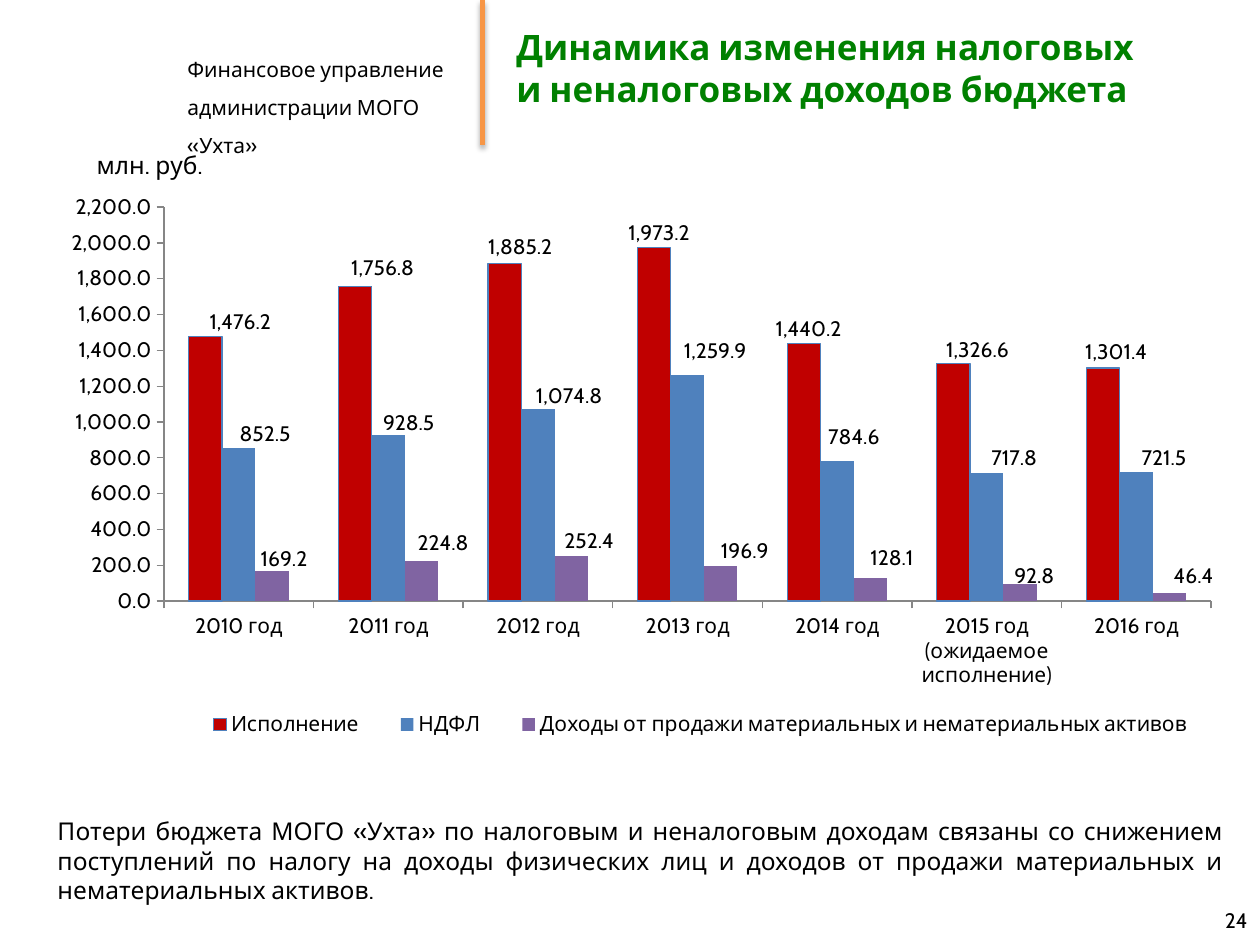
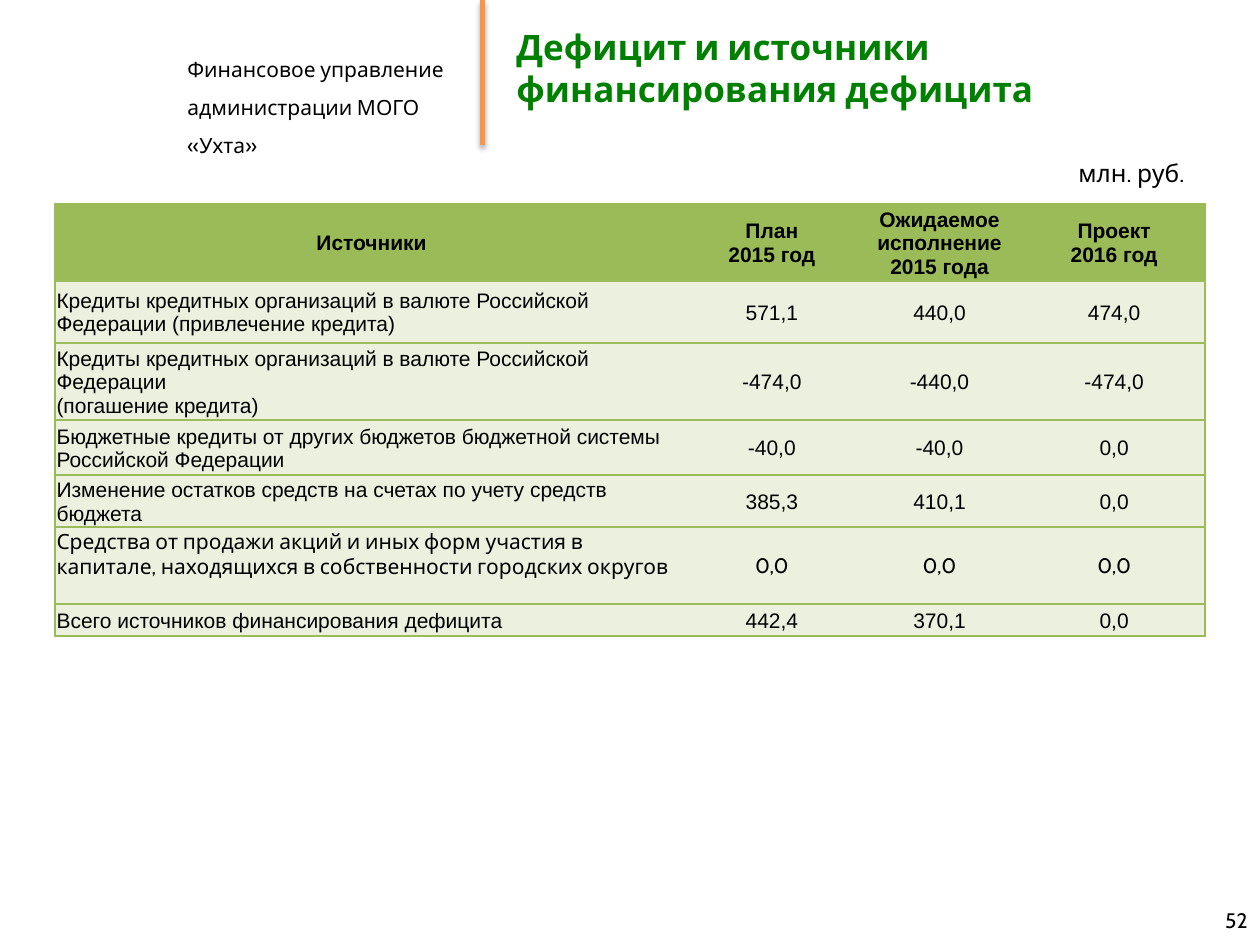
from dataclasses import dataclass

from lxml import etree
from pptx import Presentation
from pptx.chart.data import CategoryChartData
from pptx.dml.color import RGBColor
from pptx.enum.chart import XL_CHART_TYPE, XL_LABEL_POSITION, XL_LEGEND_POSITION, XL_TICK_MARK
from pptx.enum.shapes import MSO_CONNECTOR
from pptx.enum.text import MSO_ANCHOR, PP_ALIGN
from pptx.oxml import parse_xml
from pptx.oxml.ns import nsdecls, qn
from pptx.util import Cm, Pt

LEFT, CENTER, RIGHT, JUSTIFY = PP_ALIGN.LEFT, PP_ALIGN.CENTER, PP_ALIGN.RIGHT, PP_ALIGN.JUSTIFY
TOP, MIDDLE = MSO_ANCHOR.TOP, MSO_ANCHOR.MIDDLE
COLUMNS = XL_CHART_TYPE.COLUMN_CLUSTERED
ABOVE_BAR = XL_LABEL_POSITION.OUTSIDE_END
LEGEND_BOTTOM = XL_LEGEND_POSITION.BOTTOM
TICK_OUT = XL_TICK_MARK.OUTSIDE
STRAIGHT = MSO_CONNECTOR.STRAIGHT


@dataclass(frozen=True)
class Theme:
    font: str = "Cabin"
    table_font: str = "Arial"
    text: str = "000000"
    title: str = "008000"
    divider: str = "F79646"
    axis: str = "868686"
    bar_outline: str = "4F81BD"
    table_green: str = "9BBB59"
    table_pale: str = "EBF1DE"
    paper: str = "FFFFFF"
    title_size: int = 20
    body_size: int = 14
    small_size: int = 12


THEME = Theme()

DEPARTMENT = "Финансовое управление\nадминистрации МОГО «Ухта»"
UNIT = "млн. руб."
NUMBER_FORMAT = "#,##0.0"

INCOME_TITLE = "Динамика изменения налоговых и неналоговых доходов бюджета"
INCOME_NOTE = (
    "Потери бюджета МОГО «Ухта» по налоговым и неналоговым доходам связаны со снижением "
    "поступлений по налогу на доходы физических лиц и доходов от продажи материальных и "
    "нематериальных активов."
)
YEARS = ["2010 год", "2011 год", "2012 год", "2013 год", "2014 год",
         "2015 год (ожидаемое исполнение)", "2016 год"]
# Label shifts are percentages of the chart width and height.
INCOME_SERIES = [
    {"name": "Исполнение", "color": "C00000",
     "values": [1476.2, 1756.8, 1885.2, 1973.2, 1440.2, 1326.6, 1301.4],
     "shifts": [(2.9, .5), (2.3, -.2), (1.3, .2), (.4, .4), (.4, .6), (2, .6), (1.1, .2)]},
    {"name": "НДФЛ", "color": "4F81BD",
     "values": [852.5, 928.5, 1074.8, 1259.9, 784.6, 717.8, 721.5],
     "shifts": [(2.2, .5), (1.7, .9), (2.6, .8), (2.3, -1.1), (1.4, -.9), (2.3, .5), (2.3, .6)]},
    {"name": "Доходы от продажи материальных и нематериальных активов", "color": "8064A2",
     "values": [169.2, 224.8, 252.4, 196.9, 128.1, 92.8, 46.4],
     "shifts": [(1, .9), (1.8, 0), (1.5, .5), (2, .5), (1.8, -.3), (1.2, 1.4), (2, .2)]},
]

DEFICIT_TITLE = "Дефицит и источники финансирования дефицита"
DEFICIT_ROWS = [
    ("Источники", "План\n2015 год", "Ожидаемое исполнение 2015 года", "Проект\n2016 год"),
    ("Кредиты кредитных организаций в валюте Российской Федерации (привлечение кредита)",
     "571,1", "440,0", "474,0"),
    ("Кредиты кредитных организаций в валюте Российской Федерации\n(погашение кредита)",
     "-474,0", "-440,0", "-474,0"),
    ("Бюджетные кредиты от других бюджетов бюджетной системы Российской Федерации",
     "-40,0", "-40,0", "0,0"),
    ("Изменение остатков средств на счетах по учету средств бюджета",
     "385,3", "410,1", "0,0"),
    ("Средства от продажи акций и иных форм участия в капитале, находящихся в собственности "
     "городских округов", "0,0", "0,0", "0,0"),
    ("Всего источников финансирования дефицита", "442,4", "370,1", "0,0"),
]
SHARES_ROW = 5
COLUMN_WIDTHS = [12.76, 3.38, 3.38, 3.66]
ROW_HEIGHTS = [1.55, 1.25, 1.55, 1.11, 1.04, 1.55, 0.64]


def rgb(color):
    return RGBColor.from_string(color)


def style_font(font, size, color=THEME.text, bold=False, name=THEME.font):
    font.name, font.size, font.bold = name, Pt(size), bold
    font.color.rgb = rgb(color)


def style_frame(frame, text, size, align=LEFT, spacing=None, **look):
    frame.text = text
    for para in frame.paragraphs:
        para.alignment = align
        para.line_spacing = spacing
        for span in para.runs:
            style_font(span.font, size, **look)


def add_text(page, text, place, size, anchor=TOP, **look):
    box = page.shapes.add_textbox(*map(Cm, place))
    box.text_frame.word_wrap = True
    box.text_frame.vertical_anchor = anchor
    style_frame(box.text_frame, text, size, **look)
    return box


def add_divider(page):
    divider = page.shapes.add_connector(STRAIGHT, Cm(9.73), 0, Cm(9.73), Cm(2.92))
    divider.line.color.rgb = rgb(THEME.divider)
    divider.line.width = Pt(3)
    divider._element.spPr.append(parse_xml(
        f'<a:effectLst {nsdecls("a")}><a:outerShdw blurRad="{Pt(3.1)}" dist="{Pt(1.8)}" '
        'dir="5400000" rotWithShape="0"><a:srgbClr val="000000"><a:alpha val="35000"/>'
        '</a:srgbClr></a:outerShdw></a:effectLst>'))


def add_page(deck, title, title_width, number):
    page = deck.slides.add_slide(deck.slide_layouts[6])
    add_text(page, DEPARTMENT, (3.53, 0.76, 6.35, 1.68), THEME.small_size, spacing=1.5)
    add_divider(page)
    add_text(page, title, (10.16, 0.08, title_width, 2.57), THEME.title_size,
             anchor=MIDDLE, color=THEME.title, bold=True)
    add_text(page, str(number), (19.48, 18.03, 5.92, 1.02), THEME.small_size,
             anchor=MIDDLE, align=RIGHT)
    return page


def layout_xml(x, y, width=None, height=None, inner=False):
    """Manual chart layout; without a size it is a shift from the automatic place."""
    parts = []
    if inner:
        parts.append('<c:layoutTarget val="inner"/>')
    if width is not None:
        parts.append('<c:xMode val="edge"/><c:yMode val="edge"/>')
    parts.append(f'<c:x val="{x}"/><c:y val="{y}"/>')
    if width is not None:
        parts.append(f'<c:w val="{width}"/><c:h val="{height}"/>')
    return parse_xml(f'<c:layout {nsdecls("c")}><c:manualLayout>{"".join(parts)}'
                     '</c:manualLayout></c:layout>')


def set_layout(element, layout, after=None):
    for old in element.findall(qn("c:layout")):
        element.remove(old)
    if after is None:
        element.insert(0, layout)
    else:
        element.find(qn(after)).addnext(layout)


def style_series(series, content):
    series.format.fill.solid()
    series.format.fill.fore_color.rgb = rgb(content["color"])
    series.smooth = False if hasattr(series, "smooth") else None
    labels = series.data_labels
    labels.show_value = True
    labels.number_format, labels.number_format_is_linked = NUMBER_FORMAT, False
    labels.position = ABOVE_BAR
    style_font(labels.font, THEME.small_size)
    for index in range(len(content["values"])):
        label = series.points[index].data_label
        style_font(label.font, THEME.small_size)
        label.position = ABOVE_BAR
    label_elements = series._element.xpath("c:dLbls/c:dLbl")
    for element, (right, down) in zip(label_elements, content["shifts"]):
        set_layout(element, layout_xml(right / 100, down / 100), after="c:idx")


def style_axis(axis):
    axis.has_major_gridlines = False
    axis.major_tick_mark = TICK_OUT
    axis.format.line.color.rgb = rgb(THEME.axis)
    style_font(axis.tick_labels.font, THEME.small_size)


def add_income_chart(page):
    data = CategoryChartData(number_format=NUMBER_FORMAT)
    data.categories = YEARS
    for content in INCOME_SERIES:
        data.add_series(content["name"], content["values"])
    chart = page.shapes.add_chart(COLUMNS, Cm(0.69), Cm(3.51), Cm(24.21), Cm(12.83), data).chart
    chart.has_title = False
    style_font(chart.font, THEME.small_size)

    plot = chart.plots[0]
    plot.gap_width, plot.overlap, plot.vary_by_categories = 150, 0, False
    for series, content in zip(plot.series, INCOME_SERIES):
        style_series(series, content)
    outline = plot.series[0].format.line
    outline.color.rgb, outline.width = rgb(THEME.bar_outline), Pt(0.75)

    for axis in (chart.category_axis, chart.value_axis):
        style_axis(axis)
    scale = chart.value_axis
    scale.minimum_scale, scale.maximum_scale, scale.major_unit = 0, 2200, 200
    scale.tick_labels.number_format = NUMBER_FORMAT
    scale.tick_labels.number_format_is_linked = False

    chart.has_legend = True
    chart.legend.position = LEGEND_BOTTOM
    chart.legend.include_in_layout = False
    style_font(chart.legend.font, THEME.small_size)
    set_layout(chart.legend._element, layout_xml(0.12, 0.83, 0.87, 0.07), after="c:legendPos")
    plot_area = chart._chartSpace.chart.plotArea
    set_layout(plot_area, layout_xml(0.108, 0.052, 0.872, 0.619, inner=True))


def set_borders(cell, sides):
    """Draw the named sides (of L, R, T, B) in green and clear the others."""
    properties = cell._tc.get_or_add_tcPr()
    for position, side in enumerate("LRTB"):
        border = etree.Element(qn(f"a:ln{side}"), w=str(Pt(1)))
        if side in sides:
            fill = etree.SubElement(border, qn("a:solidFill"))
            etree.SubElement(fill, qn("a:srgbClr"), val=THEME.table_green)
        else:
            etree.SubElement(border, qn("a:noFill"))
        properties.insert(position, border)


def add_deficit_table(page):
    row_count, column_count = len(DEFICIT_ROWS), len(COLUMN_WIDTHS)
    table = page.shapes.add_table(row_count, column_count, Cm(1.11), Cm(4.11),
                                  Cm(sum(COLUMN_WIDTHS)), Cm(sum(ROW_HEIGHTS))).table
    for column, width in zip(table.columns, COLUMN_WIDTHS):
        column.width = Cm(width)
    for row, height in zip(table.rows, ROW_HEIGHTS):
        row.height = Cm(height)
    for row_index, texts in enumerate(DEFICIT_ROWS):
        header = row_index == 0
        for column_index, text in enumerate(texts):
            first, last = column_index == 0, column_index == column_count - 1
            shares = row_index == SHARES_ROW
            cell = table.cell(row_index, column_index)
            cell.margin_left = cell.margin_right = cell.margin_top = Cm(0.03)
            cell.margin_bottom = 0
            cell.vertical_anchor = TOP if shares and first else MIDDLE
            cell.fill.solid()
            cell.fill.fore_color.rgb = rgb(THEME.table_green if header else THEME.table_pale)
            style_frame(cell.text_frame, text, THEME.small_size,
                        align=CENTER if header or not first else LEFT, bold=header,
                        name=THEME.font if shares else THEME.table_font)
            set_borders(cell, "TB" + "L" * (header or first) + "R" * (header or last))


def build_income_page(deck):
    page = add_page(deck, INCOME_TITLE, 13.56, 24)
    add_income_chart(page)
    add_text(page, UNIT, (1.7, 2.9, 3, 0.86), THEME.body_size)
    add_text(page, INCOME_NOTE, (0.91, 16.33, 24, 2.06), THEME.body_size, align=JUSTIFY)


def build_deficit_page(deck):
    page = add_page(deck, DEFICIT_TITLE, 12.4, 52)
    add_deficit_table(page)
    unit = add_text(page, UNIT, (21.49, 3.07, 2.64, 0.86), THEME.body_size)
    unit.text_frame.word_wrap = False
    unit.fill.solid()
    unit.fill.fore_color.rgb = rgb(THEME.paper)


def main():
    deck = Presentation()
    deck.slide_width, deck.slide_height = Cm(25.4), Cm(19.05)
    build_income_page(deck)
    build_deficit_page(deck)
    deck.save("out.pptx")


if __name__ == "__main__":
    main()
